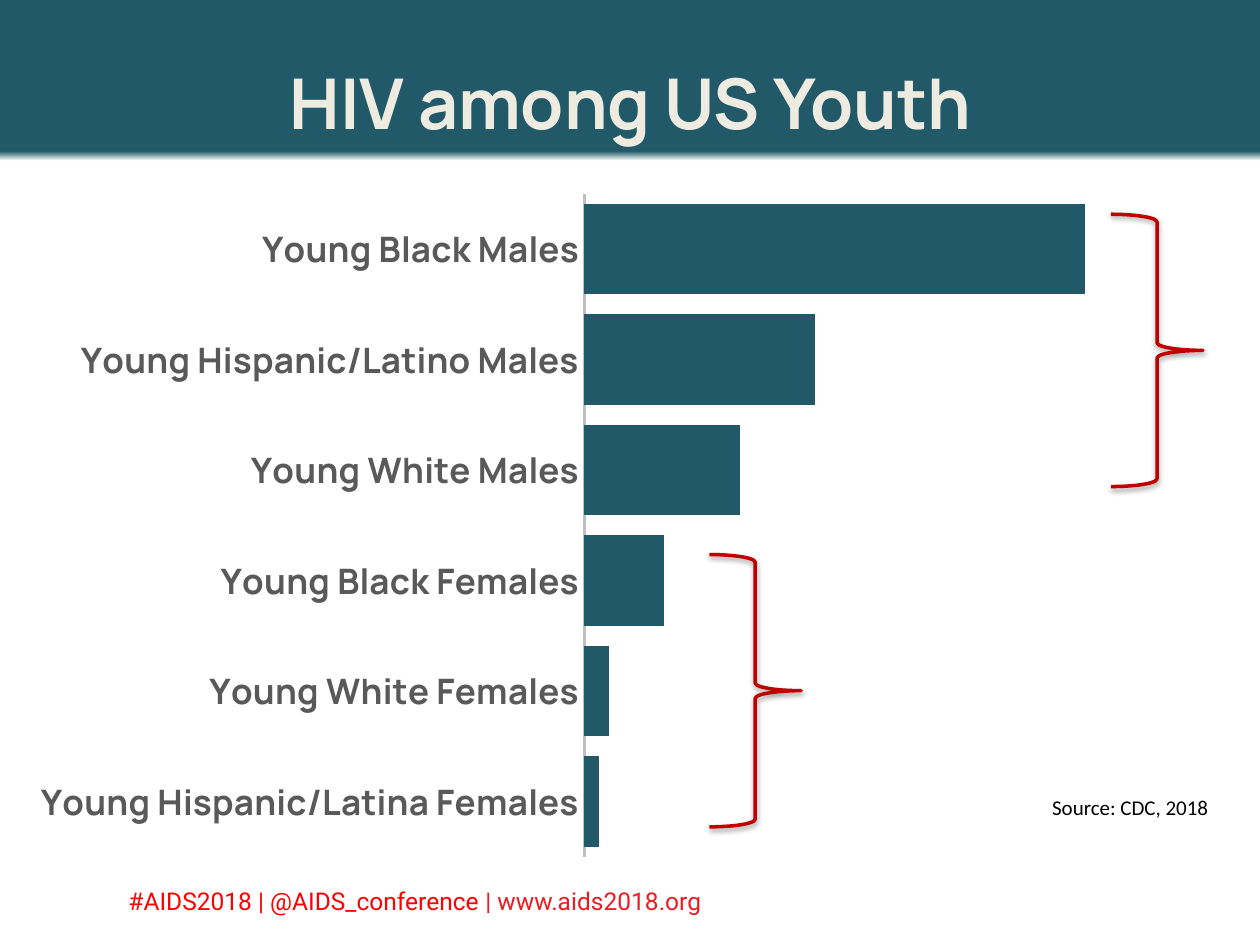
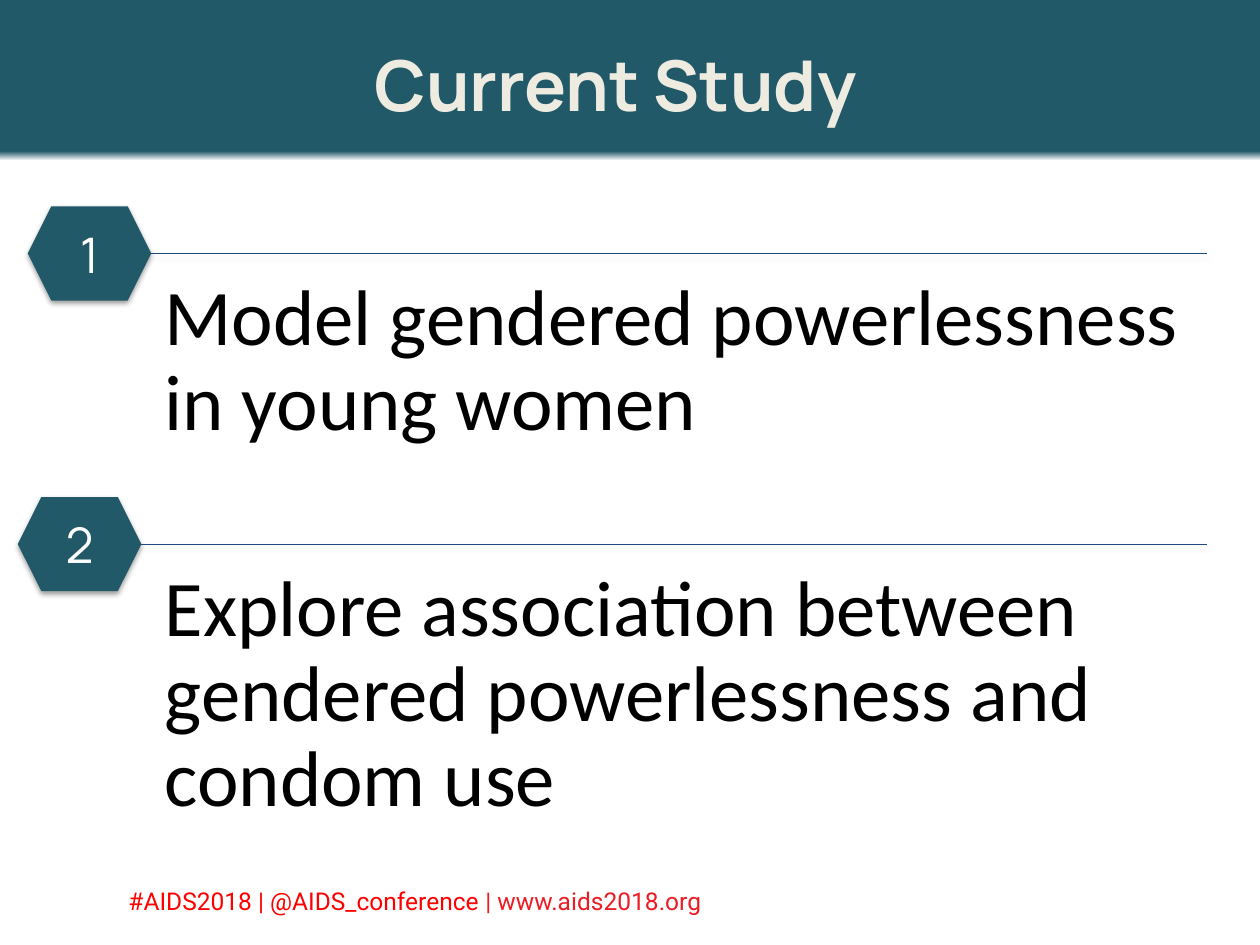
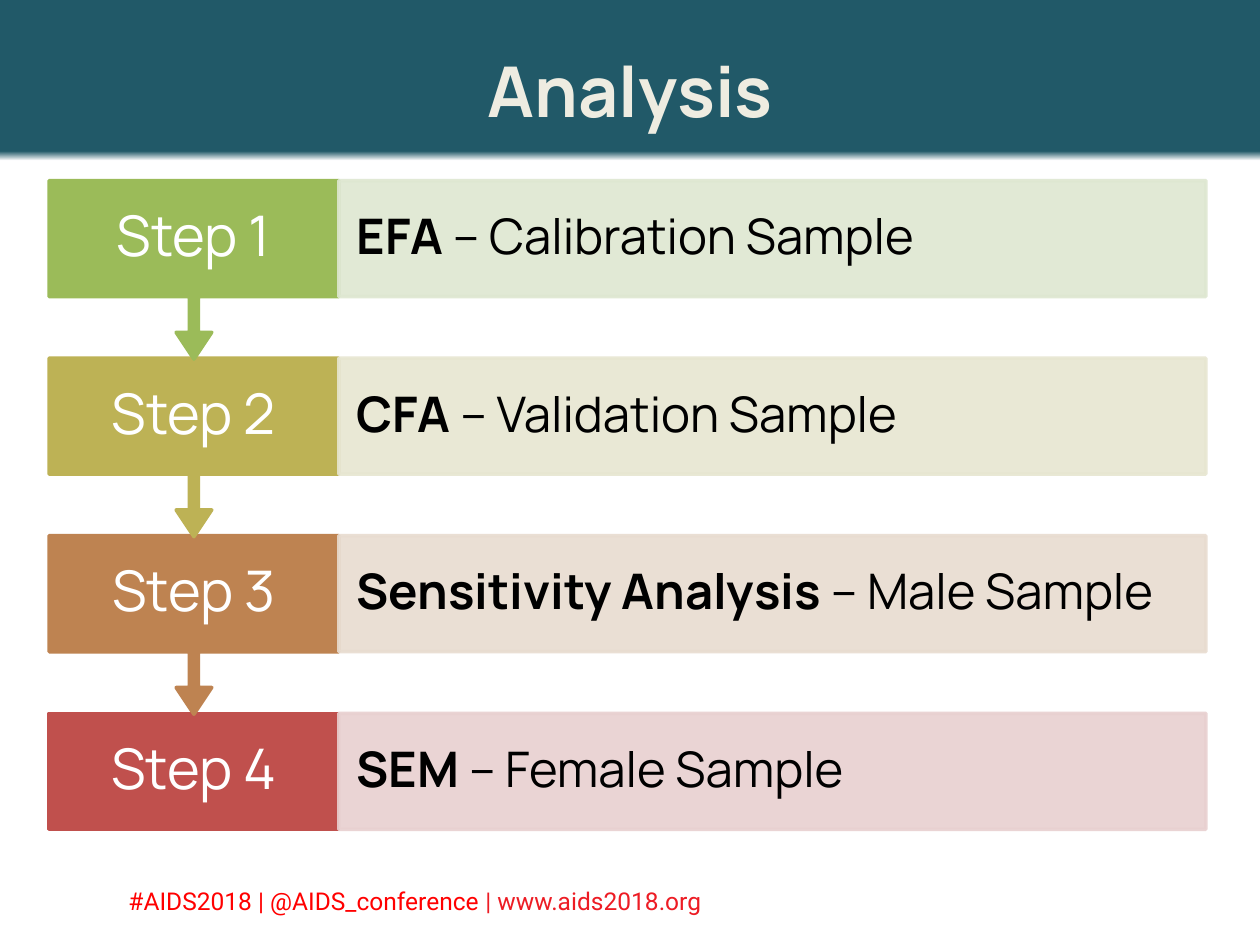
from lxml.etree import SubElement
from pptx import Presentation
from pptx.chart.data import CategoryChartData
from pptx.dml.color import RGBColor
from pptx.enum.chart import XL_CHART_TYPE, XL_TICK_MARK
from pptx.enum.shapes import MSO_CONNECTOR, MSO_SHAPE
from pptx.enum.text import MSO_ANCHOR, PP_ALIGN
from pptx.oxml import parse_xml
from pptx.oxml.ns import nsdecls, qn
from pptx.util import Cm, Pt

COLORS = {
    "teal": "215968", "white": "FFFFFF", "cream": "EEECE1", "black": "000000",
    "red": "FF0000", "crimson": "ED1C24", "brace": "C00000", "navy": "1F497D",
    "label": "595959", "axis": "BFBFBF",
    "step1": "9BBB59", "step2": "BDB255", "step3": "BE8351", "step4": "C0504D",
    "body1": "DEE7D1", "body2": "E7E6D1", "body3": "E8DCD0", "body4": "E8D0D0",
}
HEADING, BODY, FOOTER = "Manrope", "Calibri", "Roboto"

RATES = {
    "Young Hispanic/Latina Females": 3,
    "Young White Females": 5,
    "Young Black Females": 16,
    "Young White Males": 31,
    "Young Hispanic/Latino Males": 46,
    "Young Black Males": 100,
}
STEPS = [
    ("EFA", "Calibration Sample"),
    ("CFA", "Validation Sample"),
    ("Sensitivity Analysis", "Male Sample"),
    ("SEM", "Female Sample"),
]


def rgb(name):
    """Return the named colour."""
    return RGBColor.from_string(COLORS[name])


def cm(box):
    """Convert a box in centimetres to lengths."""
    return [Cm(v) for v in box]


def set_font(font, name, size, color=None, bold=None):
    """Set the face, size, colour and weight of a font."""
    font.name, font.size, font.bold = name, Pt(size), bold
    if color:
        font.color.rgb = rgb(color)


def write(sp, runs, name, size, color=None, bold=None, align=PP_ALIGN.LEFT,
          anchor=MSO_ANCHOR.TOP, spacing=None):
    """Write one paragraph of runs into a shape and return the runs."""
    tf = sp.text_frame
    tf.word_wrap = True
    tf.vertical_anchor = anchor
    p = tf.paragraphs[0]
    p.alignment = align
    p.line_spacing = spacing
    set_font(p.font, name, size, color, bold)
    for text in runs:
        p.add_run().text = text
    return p.runs


def set_insets(sp, side, vertical):
    """Set the text insets of a shape in centimetres."""
    tf = sp.text_frame
    tf.margin_left = tf.margin_right = Cm(side)
    tf.margin_top = tf.margin_bottom = Cm(vertical)


def add_shadow(sp):
    """Give a shape or connector a soft shadow below it."""
    sp._element.spPr.append(parse_xml(
        f'<a:effectLst {nsdecls("a")}>'
        '<a:outerShdw blurRad="40000" dist="20000" dir="5400000" rotWithShape="0">'
        f'<a:srgbClr val="{COLORS["black"]}"><a:alpha val="38000"/></a:srgbClr>'
        '</a:outerShdw></a:effectLst>'))


def add_block(slide, kind, box, fill=None, line=None):
    """Add a preset shape with an optional fill and 2 pt outline."""
    sp = slide.shapes.add_shape(kind, *cm(box))
    if fill:
        sp.fill.solid()
        sp.fill.fore_color.rgb = rgb(fill)
    else:
        sp.fill.background()
    if line:
        sp.line.color.rgb = rgb(line)
        sp.line.width = Pt(2)
    else:
        sp.line.fill.background()
    return sp


def add_slide(prs, title, box):
    """Add a slide with the shared band, footer and title."""
    slide = prs.slides.add_slide(prs.slide_layouts[6])
    fill = slide.background.fill
    fill.gradient()
    fill.gradient_angle = 270
    for stop, color, pos in zip(fill.gradient_stops, ("teal", "white"), (0.16, 0.17)):
        stop.color.rgb = rgb(color)
        stop.position = pos
    footer = slide.shapes.add_textbox(*cm((2.34, 17.73, 18.67, 0.86)))
    runs = write(footer, ["#AIDS2018 | @AIDS_conference ", "| www.aids2018.org"], FOOTER, 14)
    for r, color in zip(runs, ("red", "crimson")):
        r.font.color.rgb = rgb(color)
    write(slide.shapes.add_textbox(*cm(box)), [title], HEADING, 40, "cream", True,
          PP_ALIGN.CENTER, MSO_ANCHOR.MIDDLE)
    return slide


def set_plot_area(chart, x, y, w, h):
    """Fix the inner plot area as fractions of the chart."""
    area = chart._chartSpace.chart.plotArea
    for old in area.findall(qn("c:layout")):
        area.remove(old)
    area.insert(0, parse_xml(
        f'<c:layout {nsdecls("c")}><c:manualLayout><c:layoutTarget val="inner"/>'
        '<c:xMode val="edge"/><c:yMode val="edge"/>'
        f'<c:x val="{x}"/><c:y val="{y}"/><c:w val="{w}"/><c:h val="{h}"/>'
        '</c:manualLayout></c:layout>'))


def add_rate_chart(slide, box):
    """Add the bar chart of youth groups."""
    data = CategoryChartData()
    data.categories = RATES.keys()
    data.add_series("Series 1", RATES.values())
    chart = slide.shapes.add_chart(XL_CHART_TYPE.BAR_CLUSTERED, *cm(box), data).chart
    chart.has_title = chart.has_legend = False
    set_font(chart.font, BODY, 10, "black")
    plot = chart.plots[0]
    plot.gap_width, plot.overlap, plot.vary_by_categories = 22, -48, False
    bars = plot.series[0].format.fill
    bars.solid()
    bars.fore_color.rgb = rgb("teal")
    cat, val = chart.category_axis, chart.value_axis
    cat.major_tick_mark = cat.minor_tick_mark = XL_TICK_MARK.NONE
    set_font(cat.tick_labels.font, HEADING, 20, "label", True)
    cat.format.line.color.rgb = rgb("axis")
    cat.format.line.width = Pt(1.5)
    val.has_major_gridlines = val.visible = False
    val.minimum_scale, val.maximum_scale = 0, 110
    set_plot_area(chart, 0.49, 0.02, 0.48, 0.96)


def add_study_aim(slide, box, number, text, hexagon_left):
    """Add a numbered hexagon, its rule and the aim below the rule."""
    x, y, w, _ = box
    rule = slide.shapes.add_connector(MSO_CONNECTOR.STRAIGHT, *cm((x, y, x + w, y)))
    rule.line.color.rgb = rgb("navy")
    rule.line.width = Pt(0.75)
    add_shadow(rule)
    aim = slide.shapes.add_textbox(*cm(box))
    set_insets(aim, 0.48, 0.48)
    write(aim, [text], BODY, 45, "black", spacing=0.9)
    badge = add_block(slide, MSO_SHAPE.HEXAGON, (hexagon_left, y - 0.95, 2.49, 1.9), "teal")
    add_shadow(badge)
    write(badge, [number], HEADING, 28, "white", align=PP_ALIGN.CENTER, anchor=MSO_ANCHOR.MIDDLE)


def add_step(slide, box, number, name, sample):
    """Add one step label, with an arrow unless last, and its description."""
    x, y, w, h = box
    label_w = 5.84
    color = f"step{number}"
    if number < len(STEPS):
        label = add_block(slide, MSO_SHAPE.DOWN_ARROW_CALLOUT,
                          (x, y, label_w, h / 0.65), color, color)
        for i, value in enumerate((0.05, 0.1, 0.15, 0.65)):
            label.adjustments[i] = value
    else:
        label = add_block(slide, MSO_SHAPE.RECTANGLE, (x, y, label_w, h), color, color)
    label.shadow.inherit = False
    set_insets(label, 0.4, 0)
    write(label, [f"Step {number}"], HEADING, 32, "white", align=PP_ALIGN.CENTER,
          anchor=MSO_ANCHOR.MIDDLE, spacing=0.9)
    tint = f"body{number}"
    body = add_block(slide, MSO_SHAPE.RECTANGLE, (x + label_w, y, w - label_w, h), tint, tint)
    body.shadow.inherit = False
    for clr in body._element.spPr.iter(qn("a:srgbClr")):
        SubElement(clr, qn("a:alpha"), val="90000")
    set_insets(body, 0.36, 0)
    runs = write(body, [name, f" – {sample}"], HEADING, 28, "black",
                 anchor=MSO_ANCHOR.MIDDLE, spacing=0.9)
    runs[0].font.bold = True


def youth_slide(prs):
    """Build the slide with the chart and its two braces."""
    slide = add_slide(prs, "HIV among US Youth", (1.57, 0.46, 22.28, 3.18))
    source = slide.shapes.add_textbox(*cm((20.96, 15.9, 4.4, 0.76)))
    write(source, ["Source: CDC, 2018"], BODY, 12, "black")
    add_rate_chart(slide, (0.43, 3.63, 23.16, 13.92))
    for x, y in ((22.4, 4.32), (14.3, 11.18)):
        add_shadow(add_block(slide, MSO_SHAPE.RIGHT_BRACE, (x, y, 1.85, 5.49), line="brace"))


def study_slide(prs):
    """Build the slide with the two study aims."""
    slide = add_slide(prs, "Current Study", (3.12, 0.1, 18.57, 3.18))
    add_study_aim(slide, (2.84, 5.11, 21.49, 5.8), "1",
                  "Model gendered powerlessness in young women", 0.56)
    add_study_aim(slide, (2.84, 10.97, 21.49, 6.3), "2",
                  "Explore association between gendered powerlessness and condom use", 0.36)


def analysis_slide(prs):
    """Build the slide with the four steps, last step at the back."""
    slide = add_slide(prs, "Analysis", (1.57, 0.48, 22.28, 2.64))
    for i, (name, sample) in reversed(list(enumerate(STEPS))):
        add_step(slide, (0.99, 3.64 + 3.58 * i, 23.32, 2.34), i + 1, name, sample)


def main():
    """Build and save the deck."""
    prs = Presentation()
    prs.slide_width, prs.slide_height = Cm(25.4), Cm(19.05)
    youth_slide(prs)
    study_slide(prs)
    analysis_slide(prs)
    prs.save("out.pptx")


if __name__ == "__main__":
    main()
